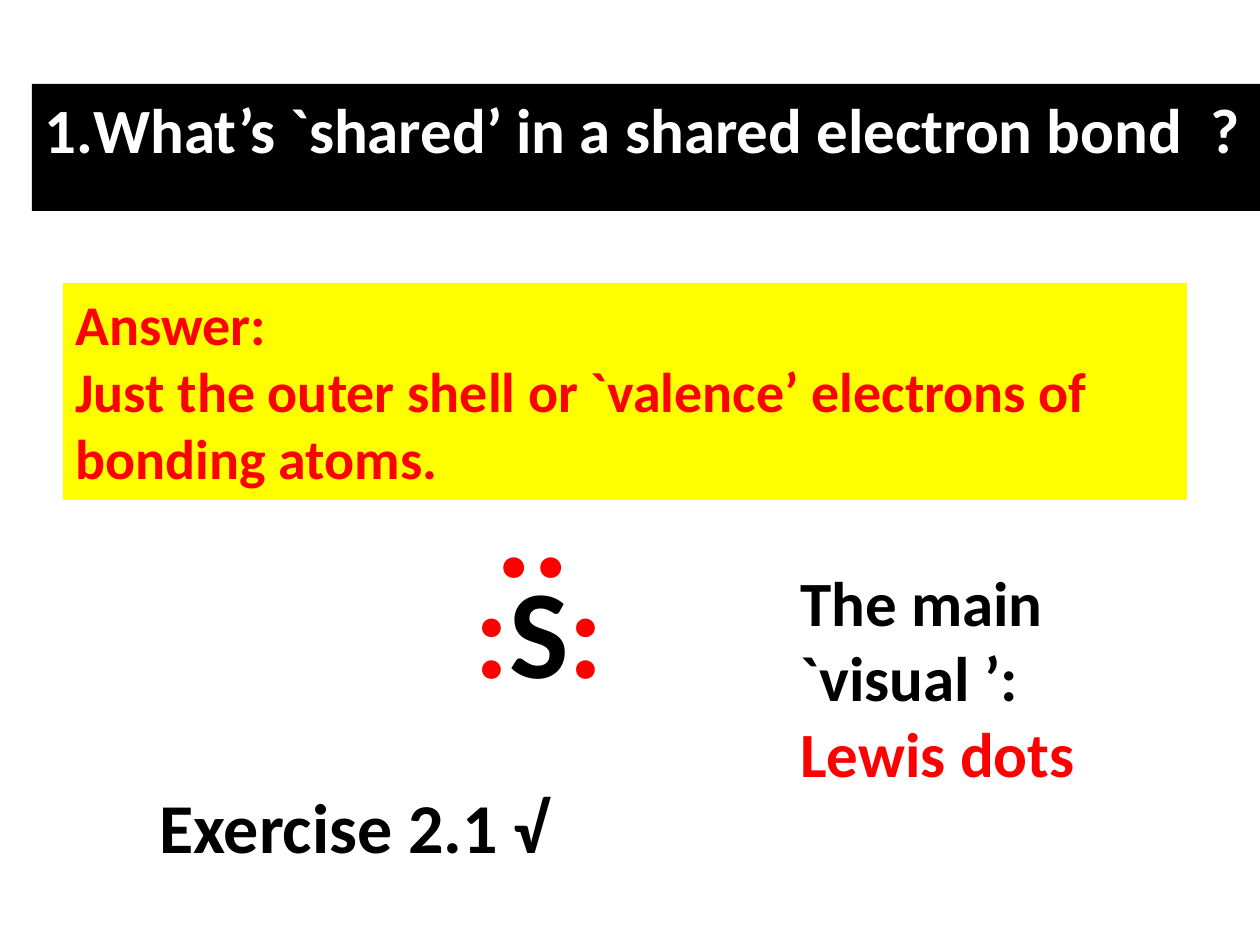
"""Build a slide on the electrons shared in a bond, with a Lewis dot symbol."""
import pptx
import pptx.dml.color
import pptx.enum.text
import pptx.oxml.ns
import pptx.util
from lxml import etree

SCALE = 914400 / 126
BLACK, WHITE, RED, YELLOW = "000000", "FFFFFF", "FF0000", "FFFF00"


def color(value):
    return pptx.dml.color.RGBColor.from_string(value)


def write(box, place, paragraphs, size, bold=True, fill=None):
    box.left, box.top, box.width, box.height = [round(px * SCALE) for px in place]
    if fill:
        box.fill.solid()
        box.fill.fore_color.rgb = color(fill)
    frame = box.text_frame
    frame.word_wrap = True
    frame.auto_size = pptx.enum.text.MSO_AUTO_SIZE.NONE
    frame.vertical_anchor = pptx.enum.text.MSO_ANCHOR.TOP
    for index, spans in enumerate(paragraphs):
        para = frame.add_paragraph() if index else frame.paragraphs[0]
        para.alignment = pptx.enum.text.PP_ALIGN.LEFT
        para.font.name = "Calibri"
        para.font.size = pptx.util.Pt(size)
        para.font.bold = bold
        para.font.color.rgb = color(spans[0][1])
        for text, ink in spans:
            span = para.add_run()
            span.text = text
            if ink != spans[0][1]:
                span.font.color.rgb = color(ink)


deck = pptx.Presentation()
deck.slide_width = pptx.util.Inches(10)
deck.slide_height = pptx.util.Inches(7.5)
page = deck.slides.add_slide(deck.slide_layouts[5])

title = page.shapes.title
question = "What’s `shared’ in a shared electron bond  ?"
write(title, (32, 84, 1228, 127), [[(question, WHITE)]], 36, fill=BLACK)
properties = title.text_frame.paragraphs[0]._p.get_or_add_pPr()
indent = round(47 * SCALE)
properties.set("marL", str(indent))
properties.set("indent", str(-indent))
numbering = etree.Element(pptx.oxml.ns.qn("a:buAutoNum"), type="arabicPeriod")
properties.insert_element_before(numbering, "a:tabLst", "a:defRPr", "a:extLst")

answer = [
    [("Answer:", RED)],
    [("Just the outer shell or `valence’ electrons of bonding atoms.", RED)],
]
symbol = [[(":", RED), ("S", BLACK), (":", RED)]]
visual = [[("The main `visual ’:", BLACK)], [("Lewis dots", RED)]]

for place, paragraphs, size, bold, fill in [
    ((63, 283, 1124, 217), answer, 32, True, YELLOW),
    ((462, 546, 210, 165), symbol, 72, True, None),
    ((483, 431, 242, 183), [[("..", RED)]], 80, True, None),
    ((788, 557, 420, 242), visual, 36, True, None),
    ((147, 777, 504, 97), [[("Exercise 2.1 √", BLACK)]], 40, True, None),
]:
    box = page.shapes.add_textbox(0, 0, 0, 0)
    write(box, place, paragraphs, size, bold, fill)

deck.save("out.pptx")
